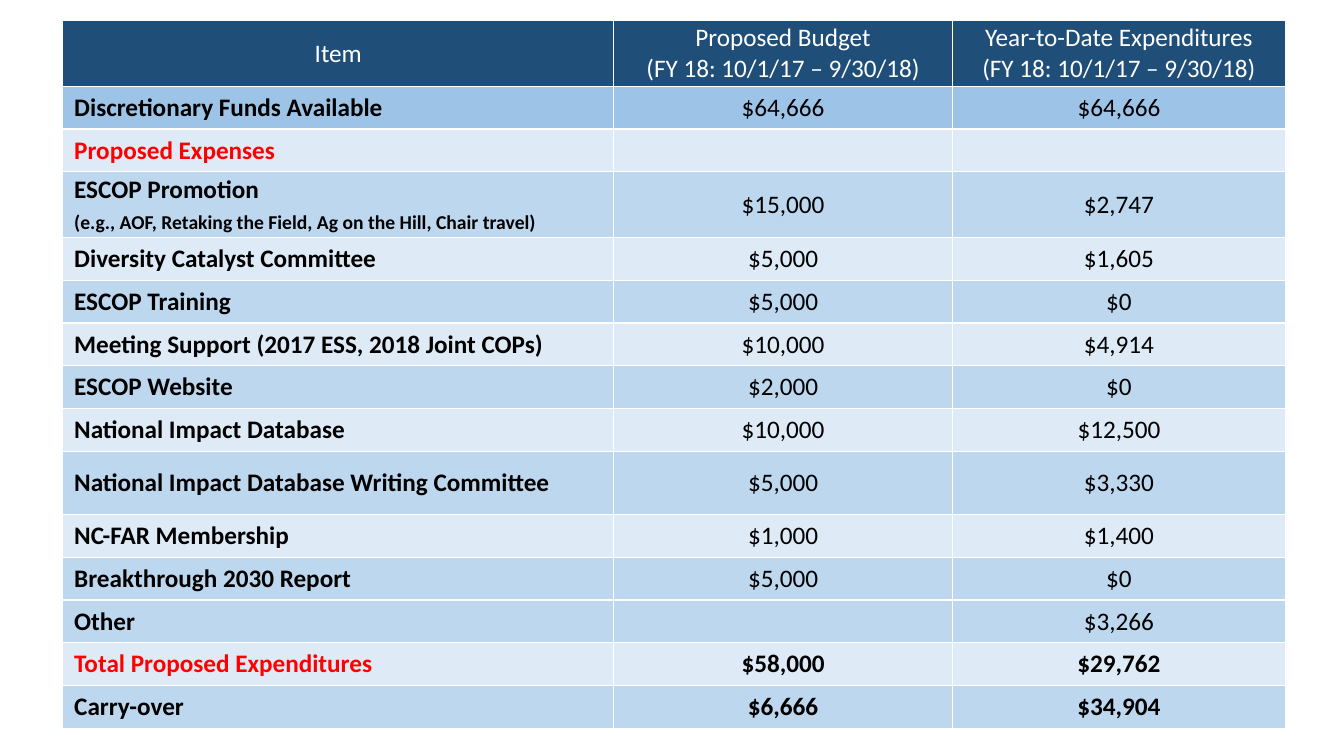
from lxml import etree
from pptx import Presentation
from pptx.dml.color import RGBColor
from pptx.enum.text import MSO_ANCHOR, PP_ALIGN
from pptx.oxml.ns import qn
from pptx.util import Cm, Pt

LEFT, CENTER, MIDDLE = PP_ALIGN.LEFT, PP_ALIGN.CENTER, MSO_ANCHOR.MIDDLE
WHITE = RGBColor(0xFF, 0xFF, 0xFF)
BLACK = RGBColor(0x00, 0x00, 0x00)
RED = RGBColor(0xFF, 0x00, 0x00)
NAVY = RGBColor(0x1F, 0x4E, 0x79)
BLUE = RGBColor(0x9D, 0xC3, 0xE6)
MID = RGBColor(0xBD, 0xD7, 0xEE)
PALE = RGBColor(0xDE, 0xEB, 0xF7)

# Budget rows: fill, item, budget, spent
PERIOD = "(FY 18: 10/1/17 – 9/30/18)"
ROWS = [
    (NAVY, "Item", "Proposed Budget\n" + PERIOD, "Year-to-Date Expenditures\n" + PERIOD),
    (BLUE, "Discretionary Funds Available", "$64,666", "$64,666"),
    (PALE, "Proposed Expenses", "", ""),
    (MID, "ESCOP Promotion\n(e.g., AOF, Retaking the Field, Ag on the Hill, Chair travel)",
     "$15,000", "$2,747"),
    (PALE, "Diversity Catalyst Committee", "$5,000", "$1,605"),
    (MID, "ESCOP Training", "$5,000", "$0"),
    (PALE, "Meeting Support (2017 ESS, 2018 Joint COPs)", "$10,000", "$4,914"),
    (MID, "ESCOP Website", "$2,000", "$0"),
    (PALE, "National Impact Database", "$10,000", "$12,500"),
    (MID, "National Impact Database Writing Committee", "$5,000", "$3,330"),
    (PALE, "NC-FAR Membership", "$1,000", "$1,400"),
    (MID, "Breakthrough 2030 Report", "$5,000", "$0"),
    (MID, "Other", "", "$3,266"),
    (PALE, "Total Proposed Expenditures", "$58,000", "$29,762"),
    (MID, "Carry-over", "$6,666", "$34,904"),
]
WIDTHS = [13.89, 8.53, 8.4]
TALL = {0: 1.65, 3: 1.65, 9: 1.58}
HEIGHTS = [TALL.get(r, 1.08) for r in range(len(ROWS))]
RED_ROWS = (2, 13)
TOTAL = 13


def add_border(cell):
    props = cell._tc.get_or_add_tcPr()
    for side in ("lnL", "lnR", "lnT", "lnB"):
        line = etree.SubElement(props, qn("a:" + side), w=str(Pt(1)))
        solid = etree.SubElement(line, qn("a:solidFill"))
        etree.SubElement(solid, qn("a:srgbClr"), val=str(WHITE))


# Slide
deck = Presentation()
deck.slide_width, deck.slide_height = Cm(33.87), Cm(19.05)
slide = deck.slides.add_slide(deck.slide_layouts[6])

# Table grid
table = slide.shapes.add_table(
    len(ROWS), len(WIDTHS), Cm(1.58), Cm(0.52),
    Cm(sum(WIDTHS)), Cm(sum(HEIGHTS))).table
for col, width in zip(table.columns, WIDTHS):
    col.width = Cm(width)
for row, height in zip(table.rows, HEIGHTS):
    row.height = Cm(height)

# Cells
for r, (fill, *texts) in enumerate(ROWS):
    for c, text in enumerate(texts):
        cell = table.cell(r, c)
        head = r == 0
        label = c == 0 and not head
        add_border(cell)
        cell.fill.solid()
        cell.fill.fore_color.rgb = fill
        layout = {"margin_left": Cm(0.29 if label else 0), "margin_right": 0,
                  "margin_top": 0, "margin_bottom": 0, "vertical_anchor": MIDDLE}
        for name, value in layout.items():
            setattr(cell, name, value)

        # Text, with the second line of a label set smaller
        cell.text = text
        for n, para in enumerate(cell.text_frame.paragraphs):
            small = label and n > 0
            para.alignment = LEFT if label else CENTER
            para.space_before = Pt(4 if small else 0)
            style = {"name": "Calibri", "size": Pt(14 if small else 18),
                     "bold": label or r >= TOTAL}
            for name, value in style.items():
                setattr(para.font, name, value)
                for run in para.runs:
                    setattr(run.font, name, value)
            for run in para.runs:
                run.font.color.rgb = (
                    WHITE if head else RED if label and r in RED_ROWS else BLACK)

deck.save("out.pptx")
